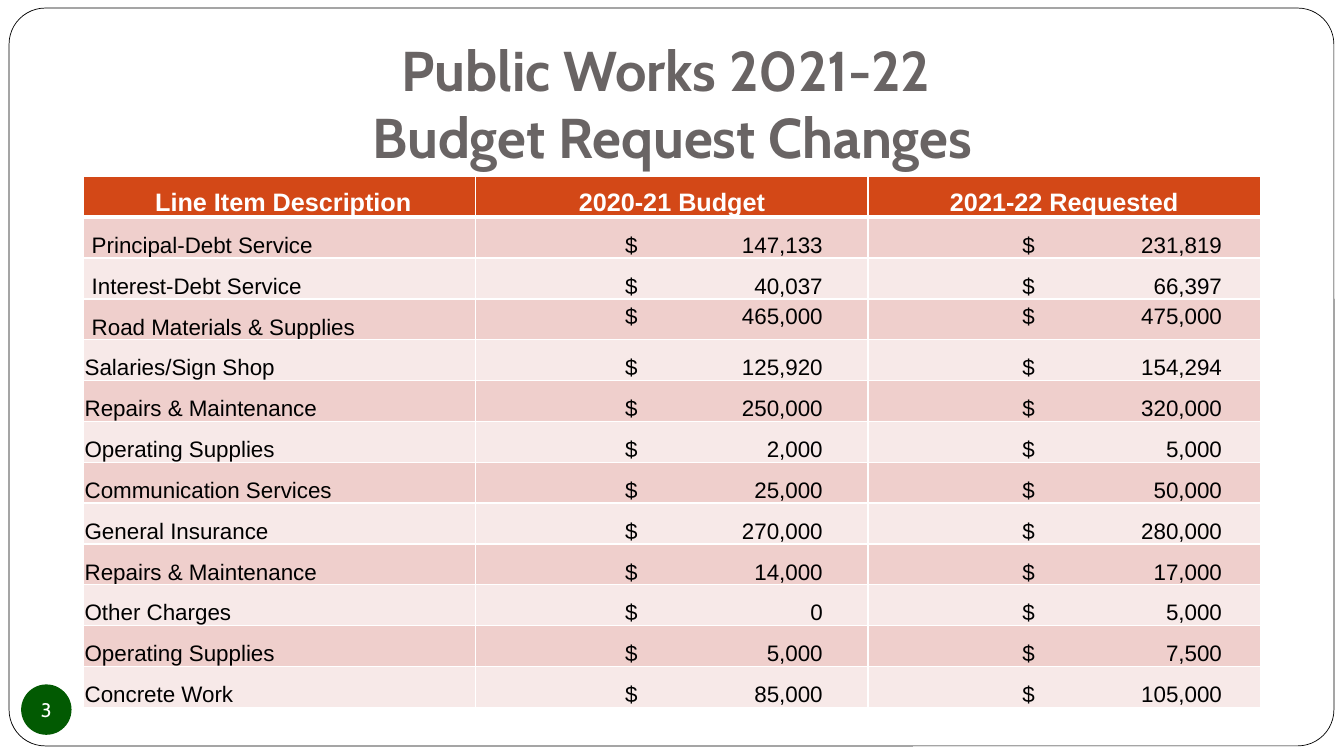
from lxml.etree import SubElement
from pptx import Presentation
from pptx.dml.color import RGBColor
from pptx.enum.shapes import MSO_SHAPE as SHAPE
from pptx.enum.text import MSO_ANCHOR as ANCHOR, PP_ALIGN as ALIGN
from pptx.oxml.ns import qn
from pptx.util import Inches, Pt

WHITE = RGBColor(0xFF, 0xFF, 0xFF)
BLACK = RGBColor(0, 0, 0)
TITLE_GREY = RGBColor(0x69, 0x64, 0x64)
HEADER_ORANGE = RGBColor(0xD3, 0x48, 0x17)
BANDS = (RGBColor(0xEF, 0xCF, 0xCC), RGBColor(0xF7, 0xE9, 0xE8))
PAGE_GREEN = RGBColor(0x02, 0x5A, 0x02)

HEADINGS = ("Line Item Description", "2020-21 Budget", "2021-22 Requested")
LINE_ITEMS = (
    ("Principal-Debt Service", "147,133", "231,819"),
    ("Interest-Debt Service", "40,037", "66,397"),
    ("Road Materials & Supplies", "465,000", "475,000"),
    ("Salaries/Sign Shop", "125,920", "154,294"),
    ("Repairs & Maintenance", "250,000", "320,000"),
    ("Operating Supplies", "2,000", "5,000"),
    ("Communication Services", "25,000", "50,000"),
    ("General Insurance", "270,000", "280,000"),
    ("Repairs & Maintenance", "14,000", "17,000"),
    ("Other Charges", "0", "5,000"),
    ("Operating Supplies", "5,000", "7,500"),
    ("Concrete Work", "85,000", "105,000"),
)
INDENTED_ROWS = 3
TOP_ALIGNED_ITEM = "Road Materials & Supplies"
AMOUNT_TABS = {1: (1.47, 3.43), 2: (1.52, 3.5)}


def style_text(paragraph, font_name, size, color, bold=False, align=ALIGN.LEFT):
    paragraph.alignment = align
    for run in paragraph.runs:
        run.font.name = font_name
        run.font.size = Pt(size)
        run.font.bold = bold
        run.font.color.rgb = color


def set_margins(frame, left, top, right, bottom):
    frame.margin_left, frame.margin_top = Inches(left), Inches(top)
    frame.margin_right, frame.margin_bottom = Inches(right), Inches(bottom)


def add_panel(slide, kind, box, fill):
    panel = slide.shapes.add_shape(kind, *map(Inches, box))
    panel.shadow.inherit = False
    panel.fill.solid()
    panel.fill.fore_color.rgb = fill
    return panel


def add_frame(slide, box):
    frame = add_panel(slide, SHAPE.ROUNDED_RECTANGLE, box, WHITE)
    frame.adjustments[0] = 0.049
    frame.line.color.rgb = BLACK
    frame.line.width = Pt(0.5)


def add_title(slide, box):
    title = slide.shapes.add_textbox(*map(Inches, box)).text_frame
    title.word_wrap = True
    set_margins(title, 0.1, 0.05, 0.1, 0.1)
    title.text = "Public Works 2021-22 \vBudget Request Changes"
    style_text(title.paragraphs[0], "Cabin", 40, TITLE_GREY, True, ALIGN.CENTER)


def add_page_number(slide, box):
    badge = add_panel(slide, SHAPE.OVAL, box, PAGE_GREEN)
    badge.line.fill.background()
    number = badge.text_frame
    number.word_wrap = False
    number.vertical_anchor = ANCHOR.MIDDLE
    set_margins(number, 0, 0, 0, 0)
    number.text = "3"
    style_text(number.paragraphs[0], "Cabin", 14, WHITE, align=ALIGN.CENTER)


def set_borders(cell, top, bottom):
    properties = cell._tc.get_or_add_tcPr()
    for side, width in (("L", 1), ("R", 1), ("T", top), ("B", bottom)):
        border = SubElement(properties, qn(f"a:ln{side}"), w=str(Pt(width)))
        fill = SubElement(border, qn("a:solidFill"))
        SubElement(fill, qn("a:srgbClr"), val=str(WHITE))


def set_tabs(paragraph, stops):
    tabs = SubElement(paragraph._p.get_or_add_pPr(), qn("a:tabLst"))
    for position, side in zip(stops, ("l", "r")):
        SubElement(tabs, qn("a:tab"), pos=str(Inches(position)), algn=side)


def fill_cell(cell, text, row, column):
    is_header = row == 0
    indented = column == 0 and row <= INDENTED_ROWS
    set_margins(cell, 0.08 if indented else 0.01, 0.01, 0.01, 0)
    cell.vertical_anchor = ANCHOR.BOTTOM
    set_borders(cell, 3 if row == 1 else 1, 3 if is_header else 1)
    cell.fill.solid()
    cell.fill.fore_color.rgb = HEADER_ORANGE if is_header else BANDS[(row - 1) % 2]
    is_amount = column > 0 and not is_header
    cell.text = f"\t$\t{text}" if is_amount else text
    paragraph = cell.text_frame.paragraphs[0]
    if is_amount:
        set_tabs(paragraph, AMOUNT_TABS[column])
    if is_header:
        style_text(paragraph, "Arial", 18, WHITE, True, ALIGN.CENTER)
    else:
        style_text(paragraph, "Arial", 16, BLACK)


def add_budget_table(slide, box):
    rows = (HEADINGS,) + LINE_ITEMS
    table = slide.shapes.add_table(len(rows), len(HEADINGS), *map(Inches, box)).table
    table.horz_banding = False
    for row, texts in enumerate(rows):
        table.rows[row].height = Inches(box[3] / len(rows))
        for column, text in enumerate(texts):
            cell = table.cell(row, column)
            fill_cell(cell, text, row, column)
            if texts[0] == TOP_ALIGNED_ITEM and column > 0:
                cell.vertical_anchor = ANCHOR.TOP
                cell.margin_top = Inches(0.05)


def main():
    deck = Presentation()
    deck.slide_width, deck.slide_height = Inches(13.33), Inches(7.5)
    slide = deck.slides.add_slide(deck.slide_layouts[6])
    add_frame(slide, (0.09, 0.08, 13.14, 7.32))
    add_title(slide, (2.17, 0.3, 9, 1.45))
    add_budget_table(slide, (0.83, 1.75, 11.67, 5.27))
    add_page_number(slide, (0.21, 6.79, 0.5, 0.5))
    deck.save("out.pptx")


if __name__ == "__main__":
    main()
